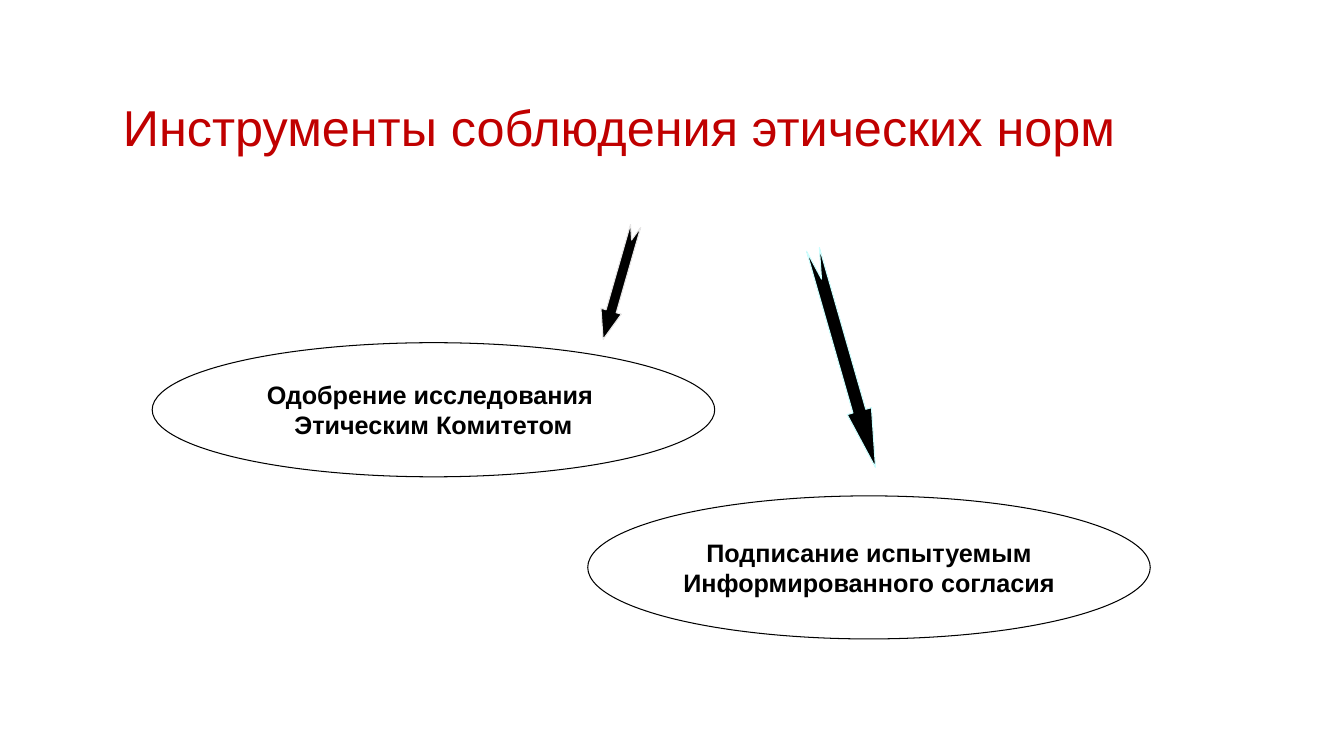
from pptx import Presentation
from pptx.dml.color import RGBColor
from pptx.enum.shapes import MSO_SHAPE as Shape
from pptx.enum.text import MSO_ANCHOR as Anchor, MSO_AUTO_SIZE as AutoSize, PP_ALIGN as Align
from pptx.util import Pt

BLACK = RGBColor(0x00, 0x00, 0x00)
WHITE = RGBColor(0xFF, 0xFF, 0xFF)
RED = RGBColor(0xC0, 0x00, 0x00)
PALE_CYAN = RGBColor(0xCC, 0xFF, 0xFF)
PALE_GREY = RGBColor(0xE7, 0xE6, 0xE6)

TITLE = "Инструменты соблюдения этических норм"
TITLE_BOX = (80.6, 48.2, 792.7, 90)

# lines of text, (left, top, width, height)
INSTRUMENTS = [
    (["Одобрение исследования ", "Этическим Комитетом"], (108.7, 244.8, 401.8, 95.8)),
    (["Подписание испытуемым", "Информированного согласия"], (419.8, 354.2, 401.8, 102.2)),
]

# box before rotation, angle, (shaft, head) adjustments, outline
ARROWS = [
    ((522, 247, 162, 18), 74, (0.53, 2.32), PALE_CYAN),
    ((400.3, 194.4, 84.2, 15.1), 106, (0.5, 1.38), PALE_GREY),
]


def write_text(shape, lines, size, color, bold=False, align=Align.LEFT, spacing=1.0, wrap=True):
    frame = shape.text_frame
    frame.auto_size = AutoSize.NONE
    frame.word_wrap = wrap
    frame.vertical_anchor = Anchor.MIDDLE
    frame.text = "\n".join(lines)
    for paragraph in frame.paragraphs:
        paragraph.alignment = align
        paragraph.line_spacing = spacing
        font = paragraph.runs[0].font
        font.name, font.size, font.bold = "Arial", Pt(size), bold
        font.color.rgb = color


def add_figure(slide, kind, box, fill, outline):
    shape = slide.shapes.add_shape(kind, *map(Pt, box))
    shape.shadow.inherit = False
    shape.fill.solid()
    shape.fill.fore_color.rgb = fill
    shape.line.color.rgb = outline
    shape.line.width = Pt(0.75)
    return shape


def main():
    presentation = Presentation()
    presentation.slide_width, presentation.slide_height = Pt(960), Pt(540)
    slide = presentation.slides.add_slide(presentation.slide_layouts.get_by_name("Title Only"))

    title = slide.shapes.title
    title.left, title.top, title.width, title.height = map(Pt, TITLE_BOX)
    write_text(title, [TITLE], 36, RED, spacing=0.9)

    for lines, box in INSTRUMENTS:
        ellipse = add_figure(slide, Shape.OVAL, box, WHITE, BLACK)
        write_text(ellipse, lines, 18, BLACK, bold=True, align=Align.CENTER, wrap=False)

    for box, angle, adjustments, outline in ARROWS:
        arrow = add_figure(slide, Shape.NOTCHED_RIGHT_ARROW, box, BLACK, outline)
        arrow.rotation = angle
        arrow.adjustments[0], arrow.adjustments[1] = adjustments

    presentation.save("out.pptx")


if __name__ == "__main__":
    main()
